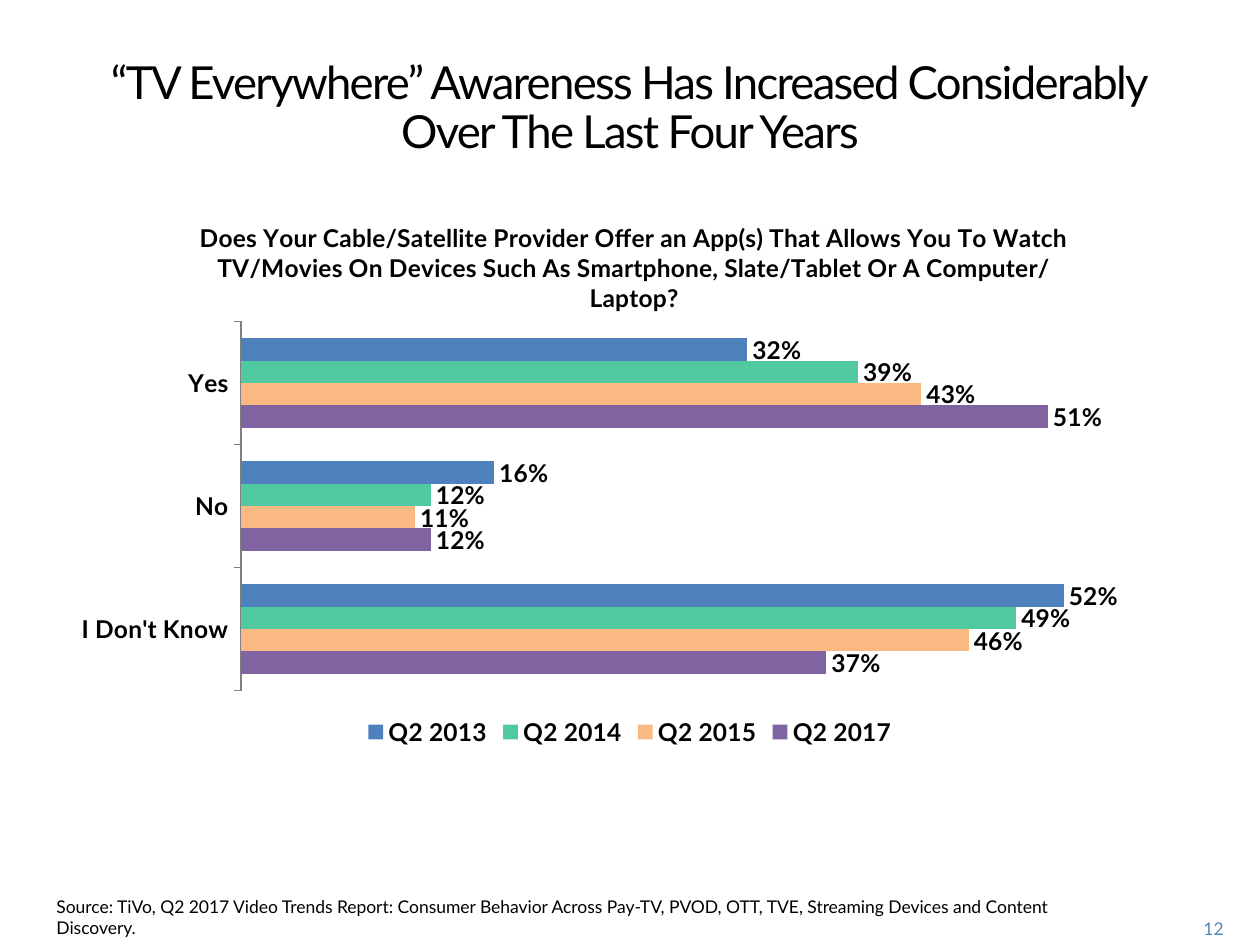
from dataclasses import dataclass

from lxml.etree import SubElement
from pptx import Presentation
from pptx.chart.data import CategoryChartData
from pptx.dml.color import RGBColor
from pptx.enum.chart import XL_CHART_TYPE as ChartType
from pptx.enum.chart import XL_LABEL_POSITION as LabelPosition
from pptx.enum.chart import XL_LEGEND_POSITION as LegendPosition
from pptx.enum.chart import XL_TICK_MARK as TickMark
from pptx.enum.text import MSO_ANCHOR as Anchor
from pptx.enum.text import PP_ALIGN as Align
from pptx.oxml.ns import qn
from pptx.util import Inches, Pt


@dataclass(frozen=True)
class Theme:
    font: str = "Lato"
    ink: str = "000000"
    axis: str = "808080"
    page_number: str = "508ABA"
    title_size: int = 26
    title_leading: int = 28
    chart_size: int = 14
    small_size: int = 10


THEME = Theme()
HEADLINE = [
    "“TV Everywhere” Awareness Has Increased Considerably",
    "Over The Last Four Years",
]
QUESTION = (
    "Does Your Cable/Satellite Provider Offer an App(s) That Allows You To Watch "
    "TV/Movies On Devices Such As Smartphone, Slate/Tablet Or A Computer/Laptop?"
)
SOURCE = (
    "Source: TiVo, Q2 2017 Video Trends Report: Consumer Behavior Across Pay-TV, "
    "PVOD, OTT, TVE, Streaming Devices and Content Discovery."
)
ANSWERS = ["I Don't Know", "No", "Yes"]
QUARTERS = [
    ("Q2 2017", [0.37, 0.12, 0.51], "8064A2"),
    ("Q2 2015", [0.46, 0.11, 0.43], "FAB982"),
    ("Q2 2014", [0.49, 0.12, 0.39], "50C8A0"),
    ("Q2 2013", [0.52, 0.16, 0.32], "4F81BD"),
]


def style_font(font, size, color=THEME.ink, bold=False):
    """Apply the theme typeface with a size, colour and weight."""
    font.name = THEME.font
    font.size = Pt(size)
    font.bold = bold
    font.color.rgb = RGBColor.from_string(color)


def add_headline(slide):
    """Place and fill the title placeholder, one paragraph per line."""
    headline = slide.shapes.title
    headline.left, headline.top = Inches(0.4), Inches(0.42)
    headline.width, headline.height = Inches(9.2), Inches(1.08)
    frame = headline.text_frame
    frame.vertical_anchor = Anchor.TOP
    for index, line in enumerate(HEADLINE):
        paragraph = frame.add_paragraph() if index else frame.paragraphs[0]
        paragraph.alignment = Align.CENTER
        paragraph.line_spacing = Pt(THEME.title_leading)
        run = paragraph.add_run()
        run.text = line
        style_font(run.font, THEME.title_size)
        run.font._element.set("spc", "-100")


def add_note(slide, text, box, color, alignment, anchor):
    """Add a small wrapped line of text."""
    note = slide.shapes.add_textbox(*map(Inches, box))
    frame = note.text_frame
    frame.word_wrap = True
    frame.vertical_anchor = anchor
    paragraph = frame.paragraphs[0]
    paragraph.alignment = alignment
    run = paragraph.add_run()
    run.text = text
    style_font(run.font, THEME.small_size, color)


def set_layout(element, **places):
    """Fix a chart part at fractions of the chart area."""
    layout = element.find(qn("c:layout"))
    if layout is None:
        layout = element.makeelement(qn("c:layout"), {})
        following = element.find(qn("c:tx"))
        element.insert(0 if following is None else 1, layout)
    manual = SubElement(layout, qn("c:manualLayout"))
    for name, value in places.items():
        SubElement(manual, qn(f"c:{name}")).set("val", str(value))


def style_axes(chart):
    """Show the answers axis and hide the percentage axis."""
    answers = chart.category_axis
    answers.major_tick_mark = TickMark.OUTSIDE
    answers.has_major_gridlines = False
    answers.format.line.color.rgb = RGBColor.from_string(THEME.axis)
    style_font(answers.tick_labels.font, THEME.chart_size, bold=True)
    shares = chart.value_axis
    shares.visible = False
    shares.has_major_gridlines = False
    shares.minimum_scale, shares.maximum_scale = 0, 0.6


def style_bars(plot):
    """Colour each quarter and label its bars."""
    plot.gap_width = 150
    plot.vary_by_categories = False
    for series, (_, _, color) in zip(plot.series, QUARTERS):
        series.format.fill.solid()
        series.format.fill.fore_color.rgb = RGBColor.from_string(color)
        labels = series.data_labels
        labels.show_value = True
        labels.number_format = "0%"
        labels.number_format_is_linked = False
        labels.position = LabelPosition.OUTSIDE_END
        style_font(labels.font, THEME.chart_size, bold=True)


def add_awareness_chart(slide):
    """Add the survey answers as clustered bars."""
    survey = CategoryChartData(number_format="0%")
    survey.categories = ANSWERS
    for quarter, shares, _ in QUARTERS:
        survey.add_series(quarter, shares)
    box = map(Inches, (0.46, 1.53, 9.08, 4.44))
    chart = slide.shapes.add_chart(ChartType.BAR_CLUSTERED, *box, survey).chart
    style_font(chart.font, THEME.chart_size, bold=True)

    question = chart.chart_title
    run = question.text_frame.paragraphs[0].add_run()
    run.text = QUESTION
    style_font(run.font, THEME.chart_size, bold=True)
    question.include_in_layout = False
    set_layout(question._element, xMode="edge", yMode="edge", x=0.12, y=0.04)

    chart.has_legend = True
    chart.legend.position = LegendPosition.BOTTOM
    chart.legend.include_in_layout = False
    style_font(chart.legend.font, THEME.chart_size, bold=True)

    style_axes(chart)
    style_bars(chart.plots[0])
    plot_area = chart._chartSpace.chart.plotArea
    set_layout(plot_area, layoutTarget="inner", xMode="edge", yMode="edge",
               x=0.16, y=0.23, w=0.83, h=0.66)


def main():
    """Build the slide and save it."""
    deck = Presentation()
    deck.slide_width, deck.slide_height = Inches(10), Inches(7.5)
    slide = deck.slides.add_slide(deck.slide_layouts[5])
    add_headline(slide)
    add_awareness_chart(slide)
    add_note(slide, SOURCE, (0.35, 7.06, 8.1, 0.26), THEME.ink, Align.LEFT, Anchor.TOP)
    add_note(slide, "12", (9.2, 7.24, 0.61, 0.25), THEME.page_number,
             Align.RIGHT, Anchor.MIDDLE)
    deck.save("out.pptx")


if __name__ == "__main__":
    main()
